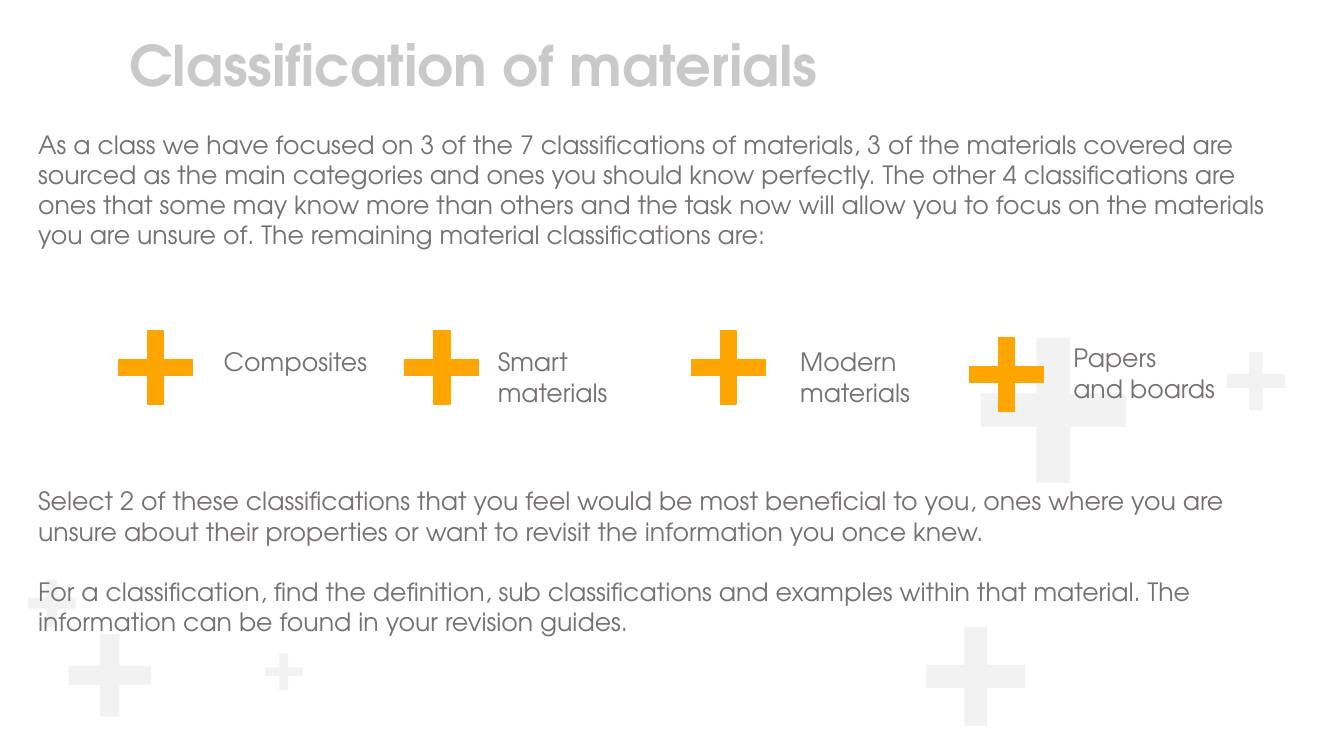
from dataclasses import dataclass

from pptx import Presentation
from pptx.dml.color import RGBColor
from pptx.enum.shapes import MSO_SHAPE
from pptx.enum.text import MSO_ANCHOR, MSO_AUTO_SIZE, PP_ALIGN
from pptx.util import Pt

FONT = "TeX Gyre Adventor"
TITLE_GREY = "C9C9C9"
TEXT_GREY = "767171"
PALE_GREY = "F2F2F2"
ORANGE = "FFA500"
BLANK_LINE = 21.6
MARKER_SIZE = 52.56


@dataclass
class Plus:
    left: float
    top: float
    size: float


@dataclass
class Material:
    name: str
    marker_left: float
    marker_top: float
    label_left: float
    label_top: float


BACKDROP = [
    Plus(700.56, 241.2, 103.68),
    Plus(661.68, 447.84, 70.56),
    Plus(48.96, 452.88, 59.04),
    Plus(876.24, 251.28, 41.76),
    Plus(20.16, 414, 33.84),
    Plus(189.36, 466.56, 26.64),
]

MATERIALS = [
    Material("Composites", 84.96, 236.16, 152.64, 244.08),
    Material("Smart\nmaterials", 289.44, 236.16, 348.48, 244.08),
    Material("Modern\nmaterials", 493.92, 236.16, 564.48, 244.08),
    Material("Papers\nand boards", 692.64, 241.2, 759.6, 241.2),
]

INTRO = (
    "As a class we have focused on 3 of the 7 classifications of materials, "
    "3 of the materials covered are sourced as the main categories and ones you "
    "should know perfectly. The other 4 classifications are ones that some may "
    "know more than others and the task now will allow you to focus on the "
    "materials you are unsure of. The remaining material classifications are:"
)

TASK = (
    "Select 2 of these classifications that you feel would be most beneficial to "
    "you, ones where you are unsure about their properties or want to revisit the "
    "information you once knew.\n"
    "For a classification, find the definition, sub classifications and examples "
    "within that material. The information can be found in your revision guides."
)


def colour(value: str) -> RGBColor:
    return RGBColor.from_string(value)


def write(box, text: str, size: float, hex_colour: str, bold: bool = False,
          gap: float = 0) -> None:
    """Fill a box with paragraphs, leaving the gap between them."""
    frame = box.text_frame
    frame.text = text
    frame.word_wrap = True
    frame.auto_size = MSO_AUTO_SIZE.NONE
    frame.vertical_anchor = MSO_ANCHOR.TOP
    for index, para in enumerate(frame.paragraphs):
        para.alignment = PP_ALIGN.LEFT
        para.space_before = Pt(gap if index else 0)
        for span in para.runs:
            span.font.name = FONT
            span.font.size = Pt(size)
            span.font.bold = bold
            span.font.color.rgb = colour(hex_colour)


def add_text(page, text: str, left: float, top: float, width: float,
             height: float, gap: float = 0) -> None:
    box = page.shapes.add_textbox(Pt(left), Pt(top), Pt(width), Pt(height))
    write(box, text, 18, TEXT_GREY, gap=gap)


def add_plus(page, plus: Plus, hex_colour: str, arm_inset: float,
             outlined: bool) -> None:
    shape = page.shapes.add_shape(MSO_SHAPE.CROSS, Pt(plus.left), Pt(plus.top),
                                  Pt(plus.size), Pt(plus.size))
    shape.adjustments[0] = arm_inset
    shape.shadow.inherit = False
    shape.fill.solid()
    shape.fill.fore_color.rgb = colour(hex_colour)
    if outlined:
        shape.line.color.rgb = colour(hex_colour)
        shape.line.width = Pt(1)
    else:
        shape.line.fill.background()


def add_title(page, text: str) -> None:
    title = page.shapes.title
    title.left, title.top = Pt(84.96), Pt(18)
    title.width, title.height = Pt(663.12), Pt(55.44)
    write(title, text, 40, TITLE_GREY, bold=True)


def main() -> None:
    deck = Presentation()
    deck.slide_width, deck.slide_height = Pt(960), Pt(540)
    page = deck.slides.add_slide(deck.slide_layouts.get_by_name("Title Only"))

    for plus in BACKDROP:
        add_plus(page, plus, PALE_GREY, 0.384, outlined=False)
    add_title(page, "Classification of materials")
    for material in MATERIALS:
        marker = Plus(material.marker_left, material.marker_top, MARKER_SIZE)
        add_plus(page, marker, ORANGE, 0.393, outlined=True)
    for material in MATERIALS:
        add_text(page, material.name, material.label_left, material.label_top,
                 200, 72.72)
    add_text(page, INTRO, 20.16, 88.56, 902.88, 138.24)
    add_text(page, TASK, 20.16, 343.44, 902.88, 159.84, gap=BLANK_LINE)

    deck.save("out.pptx")


if __name__ == "__main__":
    main()
